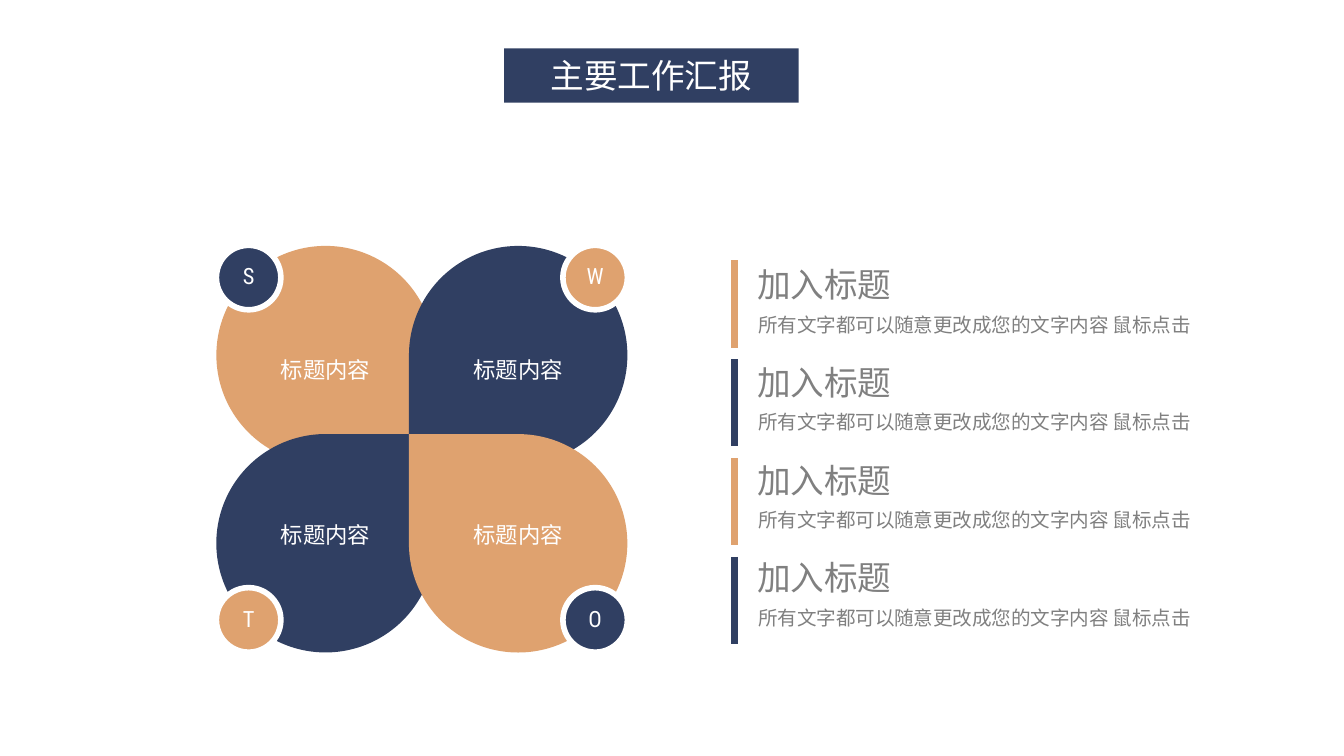
from dataclasses import dataclass

from pptx import Presentation
from pptx import util as u
from pptx.dml.color import RGBColor
from pptx.enum import shapes, text
from pptx.oxml import ns
from pptx.oxml.xmlchemy import OxmlElement

NAVY = RGBColor(0x30, 0x3F, 0x62)
SAND = RGBColor(0xDF, 0xA2, 0x6F)
GREY = RGBColor(0x80, 0x80, 0x80)
WHITE = RGBColor(0xFF, 0xFF, 0xFF)

SANS = "Noto Sans CJK SC"
CONDENSED = "Roboto Condensed"
COLUMNS = 100
WIDTH = u.Inches(10)
HEIGHT = WIDTH * 9 // 16

PETAL = 16.25
PETAL_LEFT, PETAL_TOP = (16.1, 30.43), (18.3, 32.3)
BADGE = 4.8
BADGE_LEFT, BADGE_TOP = (16.1, 41.88), (18.25, 43.73)
LABEL_TOP = (26.4, 38.7)
ENTRY_PITCH = 7.27
BAR_PITCH = 7.36


@dataclass
class Petal:
    letter: str
    column: int
    row: int
    rotation: int
    fill: RGBColor
    badge: RGBColor


@dataclass
class Entry:
    heading: str
    body: str
    color: RGBColor


PETALS = [
    Petal("S", 0, 0, 90, SAND, NAVY),
    Petal("W", 1, 0, 180, NAVY, SAND),
    Petal("T", 0, 1, 0, NAVY, SAND),
    Petal("O", 1, 1, 270, SAND, NAVY),
]
ENTRIES = [
    Entry("加入标题", "所有文字都可以随意更改成您的文字内容 鼠标点击", color)
    for color in (SAND, NAVY, SAND, NAVY)
]


def cells(count: float) -> int:
    return round(WIDTH * count / COLUMNS)


def write(sp, words: str, size: float, font: str, color: RGBColor,
          align=text.PP_ALIGN.CENTER, anchor=text.MSO_ANCHOR.MIDDLE,
          spacing: float = 0.9) -> None:
    tf = sp.text_frame
    tf.word_wrap = True
    tf.auto_size = text.MSO_AUTO_SIZE.NONE
    tf.vertical_anchor = anchor
    tf.margin_left = tf.margin_right = tf.margin_top = tf.margin_bottom = 0
    p = tf.paragraphs[0]
    p.alignment = align
    p.line_spacing = spacing
    r = p.add_run()
    r.text = words
    r.font.size = u.Pt(size)
    r.font.name = font
    r.font.color.rgb = color
    east_asian = OxmlElement("a:ea")
    east_asian.set("typeface", SANS)
    r.font._element.find(ns.qn("a:latin")).addnext(east_asian)


def add_text(s, left: float, top: float, width: float, height: float, *args, **style) -> None:
    sp = s.shapes.add_textbox(*map(cells, (left, top, width, height)))
    write(sp, *args, **style)


def add_filled(s, kind, left: float, top: float, size: float, fill: RGBColor):
    sp = s.shapes.add_shape(kind, *map(cells, (left, top, size, size)))
    sp.shadow.inherit = False
    sp.fill.solid()
    sp.fill.fore_color.rgb = fill
    sp.line.fill.background()
    return sp


def add_petal(s, petal: Petal) -> None:
    left = PETAL_LEFT[petal.column]
    drop = add_filled(s, shapes.MSO_SHAPE.TEAR, left, PETAL_TOP[petal.row], PETAL, petal.fill)
    drop.rotation = petal.rotation
    badge = add_filled(s, shapes.MSO_SHAPE.OVAL, BADGE_LEFT[petal.column],
                       BADGE_TOP[petal.row], BADGE, petal.badge)
    badge.line.color.rgb = WHITE
    badge.line.width = u.Pt(3)
    write(badge, petal.letter, 12, CONDENSED, WHITE)
    add_text(s, left, LABEL_TOP[petal.row], PETAL, 2.4, "标题内容", 12, CONDENSED, WHITE)


def add_entry(s, index: int, entry: Entry) -> None:
    top = 19.95 + index * ENTRY_PITCH
    add_text(s, 56.43, top + 3.3, 38.6, 4.7, entry.body, 10.5, SANS, GREY,
             align=text.PP_ALIGN.LEFT, anchor=text.MSO_ANCHOR.TOP, spacing=1.0)
    add_text(s, 56.34, top, 38.8, 2.8, entry.heading, 18, SANS, GREY,
             align=text.PP_ALIGN.LEFT)
    bar_top = 19.36 + index * BAR_PITCH
    bar = s.shapes.add_connector(shapes.MSO_CONNECTOR.STRAIGHT,
                                 *map(cells, (54.64, bar_top, 54.64, bar_top + 6.5)))
    bar.line.color.rgb = entry.color
    bar.line.width = u.Pt(4)
    bar._element.spPr.append(OxmlElement("a:effectLst"))


def add_title(s, words: str) -> None:
    title = s.shapes.title
    title.left, title.top, title.width, title.height = map(cells, (37.5, 3.6, 21.93, 4.04))
    title.fill.solid()
    title.fill.fore_color.rgb = NAVY
    write(title, words, 18, "Arial", WHITE, spacing=1.0)


def main() -> None:
    prs = Presentation()
    prs.slide_width, prs.slide_height = WIDTH, HEIGHT
    s = prs.slides.add_slide(prs.slide_layouts.get_by_name("Title Only"))
    add_title(s, "主要工作汇报")
    for petal in PETALS:
        add_petal(s, petal)
    for index, entry in enumerate(ENTRIES):
        add_entry(s, index, entry)
    prs.save("out.pptx")


if __name__ == "__main__":
    main()
